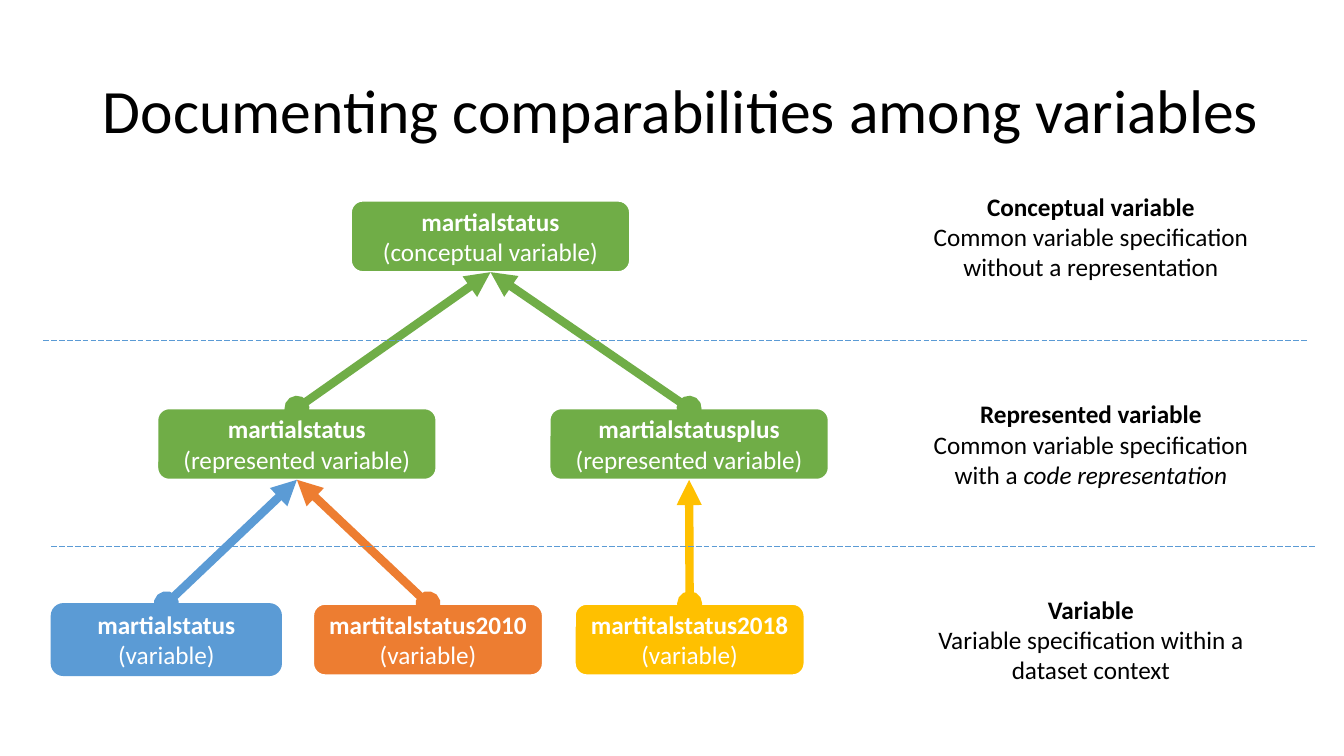
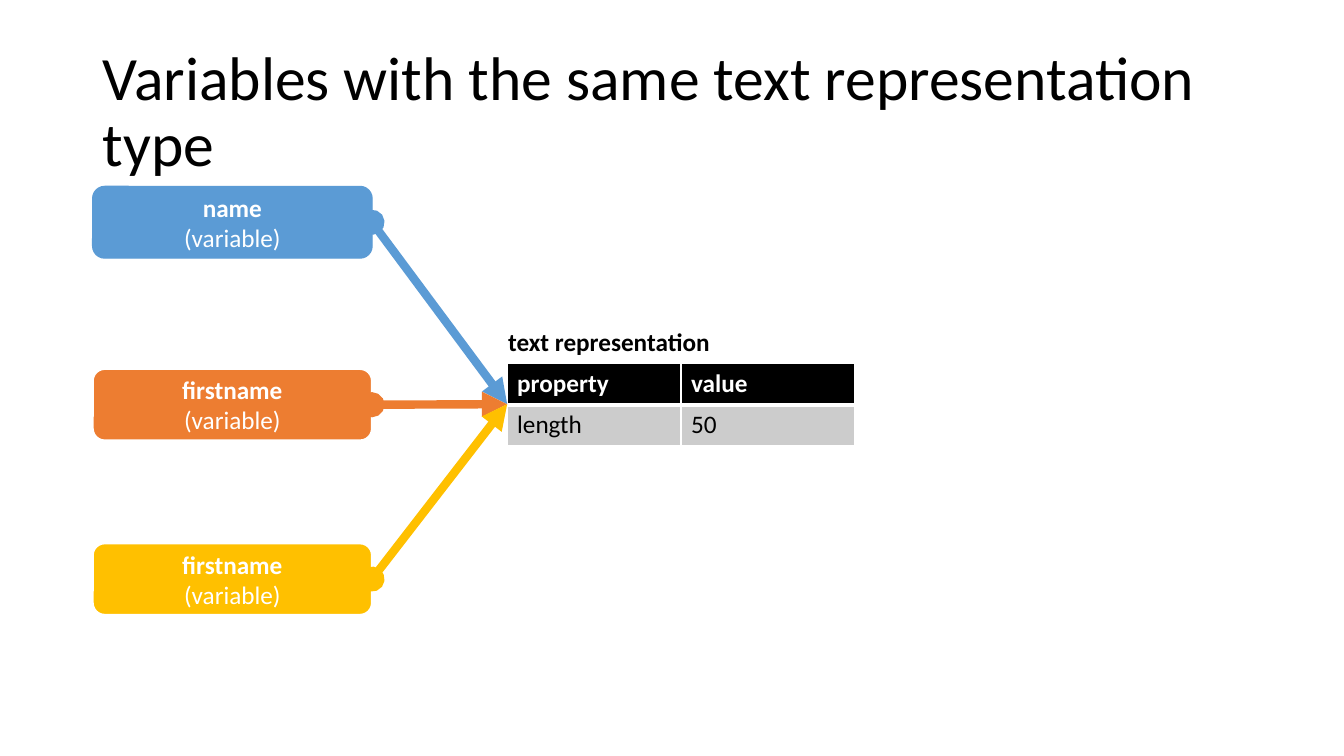
from lxml.etree import SubElement
from pptx import Presentation
from pptx.dml.color import RGBColor
from pptx.enum.dml import MSO_LINE
from pptx.enum.shapes import MSO_CONNECTOR as Connector, MSO_SHAPE as Shape
from pptx.enum.text import MSO_ANCHOR as Anchor, PP_ALIGN as Align
from pptx.oxml.ns import qn
from pptx.util import Inches, Pt

BLACK = RGBColor(0x00, 0x00, 0x00)
WHITE = RGBColor(0xFF, 0xFF, 0xFF)
GREY = RGBColor(0xCC, 0xCC, 0xCC)
GREEN = RGBColor(0x70, 0xAD, 0x47)
BLUE = RGBColor(0x5B, 0x9B, 0xD5)
ORANGE = RGBColor(0xED, 0x7D, 0x31)
YELLOW = RGBColor(0xFF, 0xC0, 0x00)
TOP, LEFT, BOTTOM, RIGHT = range(4)


class Deck:
    font = "Calibri"
    title_size = 44
    body_size = 18
    box_height = 0.71

    def __init__(self):
        self.presentation = Presentation()
        self.presentation.slide_width = Inches(13.33)
        self.presentation.slide_height = Inches(7.5)
        self.slide = None

    def add_slide(self, title, title_width):
        layout = self.presentation.slide_layouts[6]
        self.slide = self.presentation.slides.add_slide(layout)
        frame = self.text_box(0.92, 0.4, title_width, 1.45)
        frame.text = title
        paragraph = frame.paragraphs[0]
        paragraph.line_spacing = 0.9
        self.format_runs(paragraph, BLACK, size=self.title_size)

    def format_runs(self, paragraph, color, bold=False, size=body_size):
        for run in paragraph.runs:
            run.font.name = self.font
            run.font.size = Pt(size)
            run.font.bold = bold
            run.font.color.rgb = color

    def text_box(self, left, top, width, height):
        shape = self.slide.shapes.add_textbox(
            Inches(left), Inches(top), Inches(width), Inches(height))
        frame = shape.text_frame
        frame.word_wrap = True
        frame.vertical_anchor = Anchor.MIDDLE
        return frame

    def heading_and_detail(self, frame, heading, detail, color):
        frame.text = f"{heading}\n{detail}"
        for paragraph, bold in zip(frame.paragraphs, (True, False)):
            paragraph.alignment = Align.CENTER
            self.format_runs(paragraph, color, bold)

    def description(self, top, heading, detail, emphasis=""):
        frame = self.text_box(9.09, top, 3.46, 1.21)
        self.heading_and_detail(frame, heading, detail, BLACK)
        if emphasis:
            paragraph = frame.paragraphs[1]
            paragraph.add_run().text = emphasis
            self.format_runs(paragraph, BLACK)
            paragraph.runs[-1].font.italic = True

    def variable_box(self, left, top, width, name, kind, color, border=WHITE):
        shape = self.slide.shapes.add_shape(
            Shape.ROUNDED_RECTANGLE, Inches(left), Inches(top),
            Inches(width), Inches(self.box_height))
        shape.shadow.inherit = False
        shape.fill.solid()
        shape.fill.fore_color.rgb = color
        shape.line.color.rgb = border
        shape.line.width = Pt(1.5 if border == WHITE else 1)
        shape.text_frame.word_wrap = True
        shape.text_frame.vertical_anchor = Anchor.MIDDLE
        self.heading_and_detail(shape.text_frame, name, f"({kind})", WHITE)
        return shape

    def line(self, start, end, color, width):
        connector = self.slide.shapes.add_connector(
            Connector.STRAIGHT, *map(Inches, start + end))
        connector.line.color.rgb = color
        connector.line.width = Pt(width)
        SubElement(connector._element.spPr, qn("a:effectLst"))
        return connector

    def divider(self, left, top):
        connector = self.line((left, top), (left + 12.54, top), BLUE, 0.5)
        connector.line.dash_style = MSO_LINE.LONG_DASH

    def arrow(self, source, source_side, color, target=None, point=(0, 0)):
        connector = self.line((0, 0), point, color, 6)
        connector.begin_connect(source, source_side)
        if target is not None:
            connector.end_connect(target, BOTTOM)
        outline = connector._element.spPr.find(qn("a:ln"))
        SubElement(outline, qn("a:headEnd"), type="oval")
        SubElement(outline, qn("a:tailEnd"), type="triangle")

    def cell_borders(self, cell, bottom_width):
        properties = cell._tc.get_or_add_tcPr()
        for side, width in zip("LRTB", (1, 1, 1, bottom_width)):
            border = SubElement(properties, qn(f"a:ln{side}"), w=str(Pt(width)))
            fill = SubElement(border, qn("a:solidFill"))
            SubElement(fill, qn("a:srgbClr"), val=str(WHITE))

    def table(self, top, width, rows, styles, left_margin=0.1):
        row_height = 0.405
        table = self.slide.shapes.add_table(
            len(rows), len(rows[0]), Inches(5.03), Inches(top),
            Inches(width), Inches(row_height * len(rows))).table
        table.first_row = table.horz_banding = False
        for row_index, (row, style) in enumerate(zip(rows, styles)):
            fill, color, bold, bottom_width = style
            table.rows[row_index].height = Inches(row_height)
            for column_index, text in enumerate(row):
                cell = table.cell(row_index, column_index)
                self.cell_borders(cell, bottom_width)
                if fill is None:
                    cell.fill.background()
                else:
                    cell.fill.solid()
                    cell.fill.fore_color.rgb = fill
                cell.margin_left = Inches(left_margin)
                cell.text_frame.text = text
                self.format_runs(cell.text_frame.paragraphs[0], color, bold)


def build_comparabilities(deck):
    deck.add_slide("Documenting comparabilities among variables", 11.85)
    conceptual = deck.variable_box(
        3.48, 1.99, 2.77, "martialstatus", "conceptual variable", GREEN)
    status, status_plus = [
        deck.variable_box(left, 4.05, 2.77, name, "represented variable", GREEN)
        for left, name in ((1.56, "martialstatus"), (5.45, "martialstatusplus"))]
    variables = (
        ("martialstatus", BLUE, BLUE, status),
        ("martitalstatus2010", ORANGE, WHITE, status),
        ("martitalstatus2018", YELLOW, WHITE, status_plus))
    for index, (name, color, border, represented) in enumerate(variables):
        variable = deck.variable_box(
            0.51 + 2.595 * index, 5.99, 2.28, name, "variable", color, border)
        deck.arrow(variable, TOP, color, represented)
    for represented in (status, status_plus):
        deck.arrow(represented, TOP, GREEN, conceptual)
    deck.divider(0.43, 3.38)
    deck.divider(0.51, 5.42)
    deck.description(1.74, "Conceptual variable",
                     "Common variable specification without a representation")
    deck.description(3.8, "Represented variable",
                     "Common variable specification with a ",
                     "code representation")
    deck.description(5.74, "Variable",
                     "Variable specification within a dataset context")


def build_text_representation(deck):
    deck.add_slide("Variables with the same text representation type", 12.2)
    deck.table(3.2, 2.88, [["text representation"]],
               [(None, BLACK, True, 3)], left_margin=0.01)
    deck.table(3.61, 3.45, [["property", "value"], ["length", "50"]],
               [(BLACK, WHITE, True, 3), (GREY, BLACK, False, 1)])
    variables = (
        (1.85, "name", BLUE, BLUE),
        (3.66, "firstname", ORANGE, WHITE),
        (5.39, "firstname", YELLOW, WHITE))
    for top, name, color, border in variables:
        variable = deck.variable_box(
            0.92, top, 2.77, name, "variable", color, border)
        deck.arrow(variable, RIGHT, color, point=(5.03, 4.01))


def main():
    deck = Deck()
    build_comparabilities(deck)
    build_text_representation(deck)
    deck.presentation.save("out.pptx")


if __name__ == "__main__":
    main()
